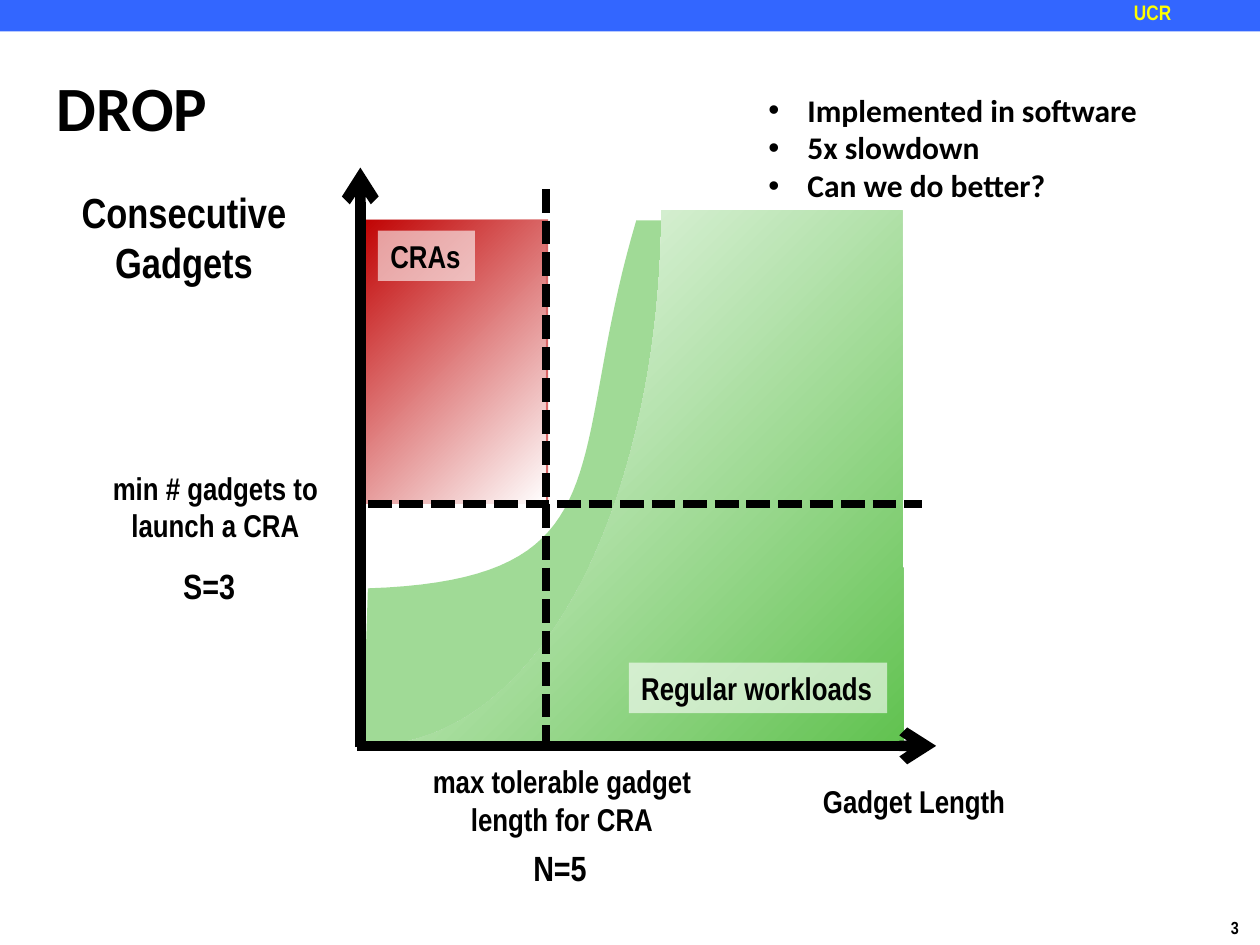
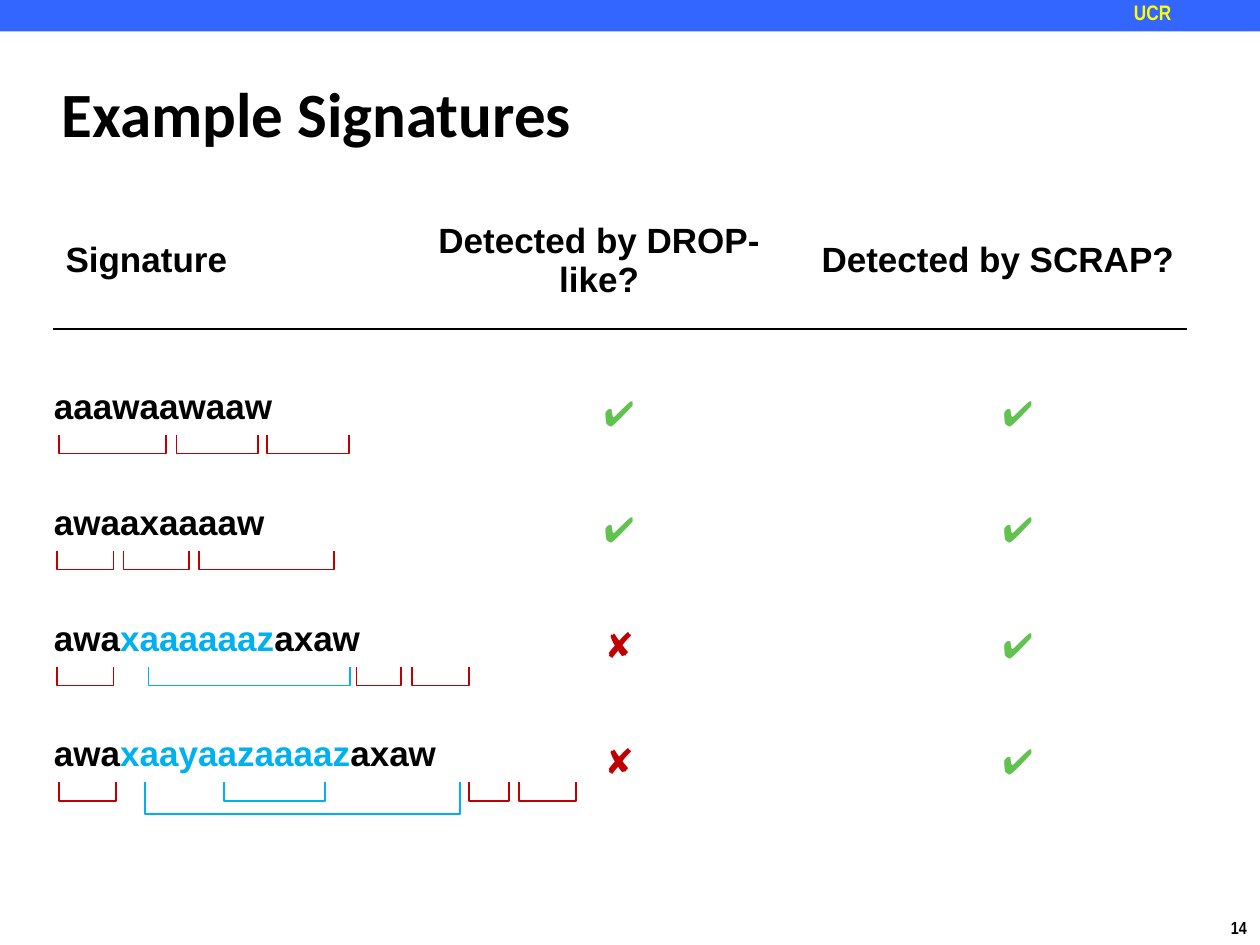
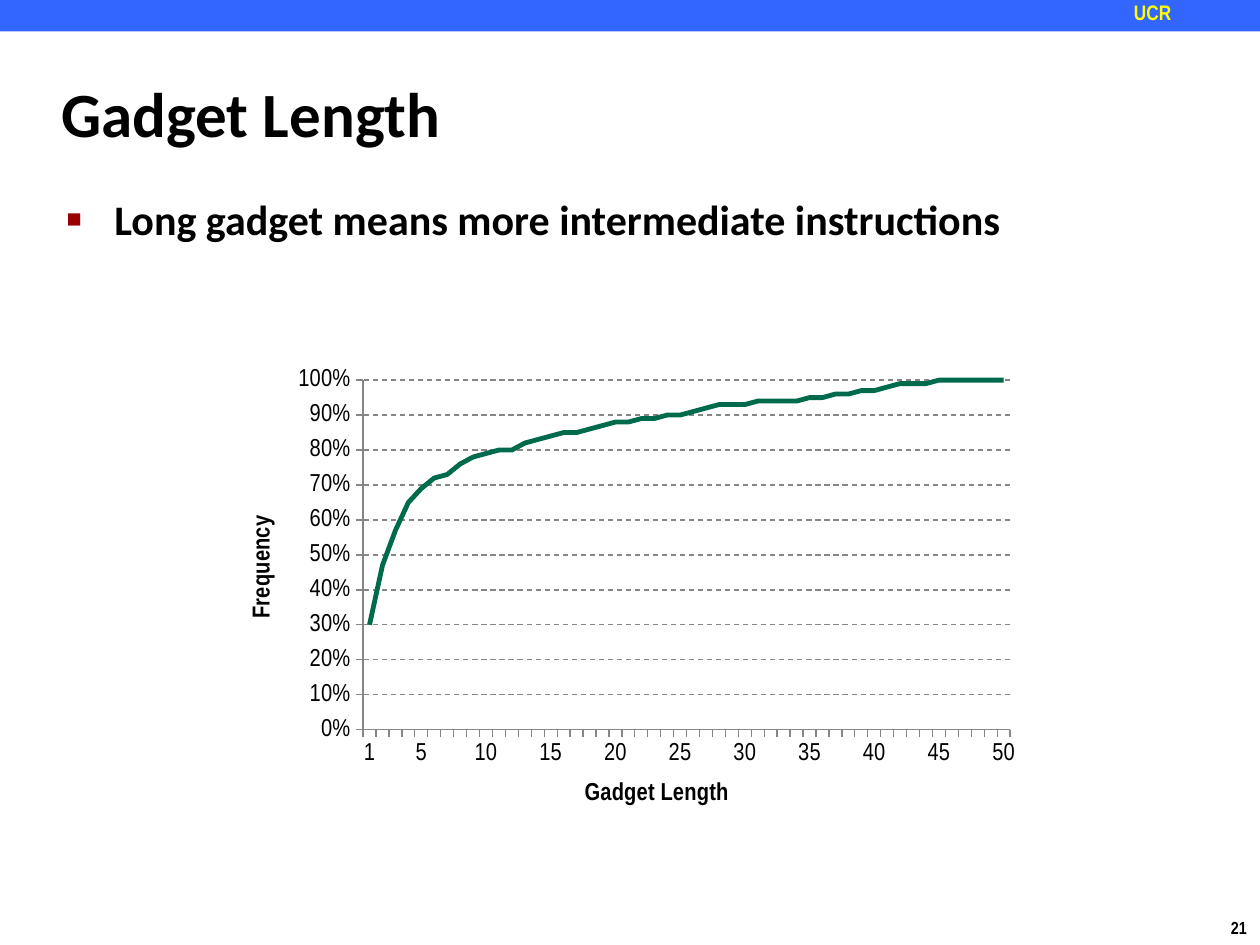
from lxml import etree
from pptx import Presentation
from pptx.chart.data import CategoryChartData
from pptx.dml.color import RGBColor
from pptx.enum.chart import XL_CHART_TYPE, XL_TICK_MARK
from pptx.enum.dml import MSO_LINE
from pptx.enum.shapes import MSO_CONNECTOR, MSO_SHAPE
from pptx.enum.text import MSO_ANCHOR, PP_ALIGN
from pptx.oxml.ns import qn
from pptx.util import Inches, Pt

RECT, BRACKET = MSO_SHAPE.RECTANGLE, MSO_SHAPE.LEFT_BRACKET
STRAIGHT = MSO_CONNECTOR.STRAIGHT
SHORT_DASH, DASH = MSO_LINE.SQUARE_DOT, MSO_LINE.DASH
LEFT, CENTER = PP_ALIGN.LEFT, PP_ALIGN.CENTER
TOP, MIDDLE = MSO_ANCHOR.TOP, MSO_ANCHOR.MIDDLE
LINE_CHART, TICK_OUT = XL_CHART_TYPE.LINE, XL_TICK_MARK.OUTSIDE

BLACK, WHITE, GRAY = "000000", "FFFFFF", "868686"
BAND_BLUE, YELLOW = "3366FF", "FFFF00"
GREEN, RED, SKY = "61C250", "C00000", "00B0F0"
BULLET_RED, CURVE_GREEN = "990000", "006A4D"
NARROW, SANS, HEADING = "Arial Narrow", "Arial", "Calibri"
PLAIN_TABLE = "{2D5ABB26-0587-4C30-8999-92F81FD0307C}"

REGULAR_CURVE = [(0.09, 3.34), (2.16, 3.27), (1.65, 2.33), (2.22, 0.42)]
REGULAR_CORNERS = [(4.3, 0.42), (4.3, 4.57), (0.05, 4.58)]
WORKLOAD_CURVE = [(0.09, 4.59), (1.51, 4.58), (2.41, 2.56), (2.42, 0.34)]
WORKLOAD_CORNERS = [(4.33, 0.34), (4.34, 4.59)]

GRAPH_LABELS = [
    ("Gadget Length", (3.34, 4.83, 2.17, 0.4), 18, True),
    ("max tolerable gadget length for CRA", (0.42, 4.67, 2.42, 0.71), 18, True),
    ("min # gadgets to launch a CRA", (-2.12, 2.34, 2, 0.71), 18, True),
    ("Consecutive Gadgets", (-2.66, 0.1, 2.58, 0.4), 24, True),
    ("N=5", (1.3, 5.34, 0.63, 0.44), 20, False),
    ("S=3", (-1.48, 3.1, 0.62, 0.44), 20, False),
]

SIGNATURES = [
    ([("aaawaawaaw", BLACK)], 1.95, "✔",
     [(0.14, 0.85, RED), (1.07, 0.65, RED), (1.79, 0.65, RED)]),
    ([("awaaxaaaaw", BLACK)], 1.89, "✔",
     [(0.12, 0.45, RED), (0.65, 0.52, RED), (1.25, 1.07, RED)]),
    ([("awa", BLACK), ("xaaaaaaz", SKY), ("axaw", BLACK)], 2.65, "✘",
     [(0.12, 0.45, RED), (0.85, 1.6, SKY), (2.5, 0.35, RED), (2.94, 0.45, RED)]),
    ([("awa", BLACK), ("xaayaazaaaaz", SKY), ("axaw", BLACK)], 3.26, "✘",
     [(0.14, 0.45, RED), (3.39, 0.32, RED), (3.79, 0.45, RED),
      (1.45, 0.8, SKY), (0.82, 2.5, SKY, 0.25)]),
]
MARK_COLORS = {"✔": GREEN, "✘": RED}

FREQUENCIES = [
    0.3, 0.47, 0.57, 0.65, 0.69, 0.72, 0.73, 0.76, 0.78, 0.79,
    0.8, 0.8, 0.82, 0.83, 0.84, 0.85, 0.85, 0.86, 0.87, 0.88,
    0.88, 0.89, 0.89, 0.9, 0.9, 0.91, 0.92, 0.93, 0.93, 0.93,
    0.94, 0.94, 0.94, 0.94, 0.95, 0.95, 0.96, 0.96, 0.97, 0.97,
    0.98, 0.99, 0.99, 0.99, 1, 1, 1, 1, 1, 1]


def rgb(value):
    """Turn a hex string into a colour."""
    return RGBColor.from_string(value)


def inches(values):
    """Turn numbers into a list of lengths."""
    return [Inches(value) for value in values]


def within(box, dx, dy, *size):
    """Offset a point or box by the corner of the given box."""
    return (box[0] + dx, box[1] + dy, *size)


def add_xml(parent, tag, **attributes):
    """Append an XML element with attributes."""
    child = etree.SubElement(parent, qn(tag))
    for key, value in attributes.items():
        child.set(key, str(value))
    return child


def style_font(font, size, color=BLACK, name=NARROW, bold=True):
    """Set the look of a font."""
    font.size, font.name, font.bold = Pt(size), name, bold
    font.color.rgb = rgb(color)


def write(frame, paragraphs, size=18, color=BLACK, font=NARROW, align=LEFT,
          hang=0, bullet=None, bullet_color=BLACK, bullet_size=100, before=0):
    """Fill a text frame with paragraphs of plain text or coloured runs."""
    for index, content in enumerate(paragraphs):
        paragraph = frame.add_paragraph() if index else frame.paragraphs[0]
        paragraph.alignment = align
        paragraph.space_before = Pt(before)
        runs = [(content, color)] if isinstance(content, str) else content
        for words, run_color in runs:
            run = paragraph.add_run()
            run.text = words
            style_font(run.font, size, run_color, font)
        if hang:
            properties = paragraph._p.get_or_add_pPr()
            properties.set("marL", str(Inches(hang)))
            properties.set("indent", str(-Inches(hang)))
        if bullet:
            add_xml(add_xml(properties, "a:buClr"), "a:srgbClr", val=bullet_color)
            add_xml(properties, "a:buSzPct", val=bullet_size * 1000)
            add_xml(properties, "a:buFont", typeface=SANS)
            add_xml(properties, "a:buChar", char=bullet)


def add_text(slide, box, paragraphs, wrap=True, inset=True, anchor=TOP, **fmt):
    """Add a text box."""
    frame = slide.shapes.add_textbox(*inches(box)).text_frame
    frame.word_wrap, frame.vertical_anchor = wrap, anchor
    if not inset:
        frame.margin_left = frame.margin_right = 0
        frame.margin_top = frame.margin_bottom = 0
    write(frame, paragraphs, **fmt)


def paint(shape, fill, opacity=100):
    """Give a shape a flat or diagonal two-colour fill and no outline."""
    shape.shadow.inherit = False
    shape.line.fill.background()
    if isinstance(fill, tuple):
        shape.fill.gradient()
        shape.fill.gradient_angle = 315
        for stop, color in zip(shape.fill.gradient_stops, fill):
            stop.color.rgb = rgb(color)
        return
    shape.fill.solid()
    shape.fill.fore_color.rgb = rgb(fill)
    if opacity < 100:
        color = shape._element.spPr.find(".//" + qn("a:srgbClr"))
        add_xml(color, "a:alpha", val=opacity * 1000)


def add_rect(slide, box, fill, opacity=100):
    """Add a filled rectangle."""
    rect = slide.shapes.add_shape(RECT, *inches(box))
    paint(rect, fill, opacity)
    return rect


def add_line(slide, start, end, width, dash=None, arrow=False):
    """Add a straight black line, dashed or with an arrowhead."""
    line = slide.shapes.add_connector(STRAIGHT, *inches(start + end))
    line.line.width = Pt(width)
    line.line.color.rgb = rgb(BLACK)
    if dash:
        line.line.dash_style = dash
    if arrow:
        add_xml(line.line._get_or_add_ln(), "a:tailEnd", type="arrow")
    add_xml(line._element.spPr, "a:effectLst")


def bezier(controls, steps=40):
    """Sample a cubic curve from its four control points."""
    points = []
    for step in range(steps + 1):
        t = step / steps
        weights = ((1 - t) ** 3, 3 * t * (1 - t) ** 2, 3 * t * t * (1 - t), t ** 3)
        points.append(tuple(sum(w * point[axis] for w, point in zip(weights, controls))
                            for axis in (0, 1)))
    return points


def add_region(slide, box, curve, corners, fill, opacity=100):
    """Add the area bounded by a curve and straight corners."""
    points = [inches(within(box, *point)) for point in bezier(curve) + corners]
    outline = slide.shapes.build_freeform(*points[0])
    outline.add_line_segments(points[1:], close=True)
    paint(outline.convert_to_shape(), fill, opacity)


def add_table(slide, box, widths, cells, align=CENTER, underline=False):
    """Add a one-row table from pairs of text and colour."""
    table = slide.shapes.add_table(1, len(cells), *inches(box)).table
    table.first_row = table.horz_banding = False
    table._tbl.tblPr.find(qn("a:tableStyleId")).text = PLAIN_TABLE
    for index, (words, color) in enumerate(cells):
        table.columns[index].width = Inches(widths[index])
        cell = table.cell(0, index)
        cell.vertical_anchor = MIDDLE
        if underline:
            border = add_xml(cell._tc.get_or_add_tcPr(), "a:lnB", w=Pt(1))
            add_xml(add_xml(border, "a:solidFill"), "a:srgbClr", val=BLACK)
        cell.fill.background()
        write(cell.text_frame, [words], size=20, color=color, font=SANS,
              align=align if index == 0 else CENTER)


def add_bracket(slide, left, top, span, color, depth=0.15):
    """Add an upward-opening bracket below a stretch of text."""
    x, y = left + (span - depth) / 2, top + (depth - span) / 2
    bracket = slide.shapes.add_shape(BRACKET, *inches((x, y, depth, span)))
    bracket.rotation = 270
    bracket.adjustments[0] = 0
    bracket.shadow.inherit = False
    bracket.fill.background()
    bracket.line.color.rgb = rgb(color)
    bracket.line.width = Pt(1)


def start_slide(deck, title, number, corner=(0.39, 0.48)):
    """Add a slide with its band, page number and title."""
    slide = deck.slides.add_slide(deck.slide_layouts[6])
    add_text(slide, (9.77, 7.28, 0.23, 0.17), [str(number)], inset=False, size=10)
    add_rect(slide, (0, 0, 10, 0.25), BAND_BLUE)
    add_text(slide, (9, 0, 1, 0.22), ["UCR"], inset=False, size=12, color=YELLOW)
    add_text(slide, (*corner, 8.3, 0.83), [title], anchor=MIDDLE,
             size=36, font=HEADING, hang=0.13)
    return slide


def add_gadget_graph(slide, box):
    """Draw the attack and workload regions with axes and thresholds."""
    width, height = box[2:]
    add_region(slide, box, REGULAR_CURVE, REGULAR_CORNERS, GREEN, 60)
    add_rect(slide, within(box, 0.02, 0.41, 1.5, 2.25), RED, 60)
    add_region(slide, box, WORKLOAD_CURVE, WORKLOAD_CORNERS, (WHITE, GREEN))
    add_rect(slide, within(box, 0, 0.42, 1.5, 2.25), (RED, WHITE))
    for words, place, size, wrap in GRAPH_LABELS:
        add_text(slide, within(box, *place), [words], wrap=wrap, size=size, align=CENTER)
    for words, place in (("Regular workloads", (2.16, 3.93, 2.05, 0.4)),
                         ("CRAs", (0.17, 0.5, 0.77, 0.4))):
        tag = add_rect(slide, within(box, *place), WHITE, 60)
        tag.text_frame.word_wrap = False
        write(tag.text_frame, [words])
    add_line(slide, within(box, 0.03, height), within(box, 0.03, 0), 6, arrow=True)
    add_line(slide, within(box, 0, 4.59), within(box, width, 4.59), 6, arrow=True)
    add_line(slide, within(box, 1.5, 0.17), within(box, 1.5, 4.57), 4.5, SHORT_DASH)
    add_line(slide, within(box, 0.09, 2.67), within(box, 4.49, 2.67), 4.5, SHORT_DASH)


def add_signature_row(slide, box, runs, text_width, drop_mark, brackets):
    """Place one signature with its brackets and detection marks."""
    add_text(slide, within(box, 0, 0.25, text_width, 0.44), [runs],
             wrap=False, size=20, font=SANS)
    marks = [(mark, MARK_COLORS[mark]) for mark in (drop_mark, "✔")]
    add_table(slide, within(box, 2.92, 0, 6.33, box[3]), (3.33, 3), marks)
    for offset, span, color, *depth in brackets:
        left, top = within(box, offset, 0.7)
        add_bracket(slide, left, top, span, color, *depth)


def add_frequency_chart(slide, box):
    """Plot cumulative frequency by gadget length."""
    data = CategoryChartData(number_format="0%")
    data.categories = [str(n) if n == 1 or n % 5 == 0 else "" for n in range(1, 51)]
    data.add_series("Series 1", FREQUENCIES)
    chart = slide.shapes.add_chart(LINE_CHART, *inches(box), data).chart
    chart.has_legend = chart.has_title = False
    style_font(chart.font, 14, bold=False)
    curve = chart.plots[0].series[0]
    curve.smooth = False
    curve.format.line.color.rgb = rgb(CURVE_GREEN)
    curve.format.line.width = Pt(2.75)
    chart.plots[0].vary_by_categories = False
    lengths, shares = chart.category_axis, chart.value_axis
    for axis, title in ((lengths, "Gadget Length"), (shares, "Frequency")):
        axis.major_tick_mark = TICK_OUT
        axis.format.line.color.rgb = rgb(GRAY)
        write(axis.axis_title.text_frame, [title], size=14, align=CENTER)
    shares.minimum_scale, shares.maximum_scale, shares.major_unit = 0, 1, 0.1
    shares.tick_labels.number_format = "0%"
    shares.tick_labels.number_format_is_linked = False
    grid = shares.major_gridlines.format.line
    grid.color.rgb, grid.dash_style = rgb(GRAY), DASH
    skip = add_xml(lengths._element, "c:tickLblSkip", val=1)
    lengths._element.find(qn("c:noMultiLvlLbl")).addprevious(skip)
    plot_area = chart._chartSpace.chart.plotArea
    for unset in plot_area.findall(qn("c:layout")):
        plot_area.remove(unset)
    layout = add_xml(plot_area, "c:layout")
    plot_area.insert(0, layout)
    manual = add_xml(layout, "c:manualLayout")
    for tag, value in (("layoutTarget", "inner"), ("xMode", "edge"), ("yMode", "edge"),
                       ("x", 0.17), ("y", 0.05), ("w", 0.8), ("h", 0.74)):
        add_xml(manual, "c:" + tag, val=value)


def build_drop(deck):
    """Build the slide on the DROP thresholds."""
    slide = start_slide(deck, "DROP", 3, (0.35, 0.43))
    add_gadget_graph(slide, (2.83, 1.33, 4.6, 4.6))
    add_text(slide, (6, 0.67, 3.18, 1.01),
             ["Implemented in software", "5x slowdown", "Can we do better?"],
             font=HEADING, hang=0.31, bullet="•")


def build_signatures(deck):
    """Build the slide comparing detection of signatures."""
    slide = start_slide(deck, "Example Signatures", 14)
    headings = ("Signature", "Detected by DROP-like?", "Detected by SCRAP?")
    add_table(slide, (0.42, 1.53, 9, 1.08), (2.67, 3.33, 3),
              [(heading, BLACK) for heading in headings], align=LEFT, underline=True)
    for index, signature in enumerate(SIGNATURES):
        add_signature_row(slide, (0.33, 2.75 + 0.92 * index, 9.25, 1.08), *signature)


def build_lengths(deck):
    """Build the slide on gadget length frequencies."""
    slide = start_slide(deck, "Gadget Length", 21)
    add_text(slide, (0.43, 1.49, 8.64, 5.44),
             ["Long gadget means more intermediate instructions"], size=24, font=HEADING,
             hang=0.38, bullet="■", bullet_color=BULLET_RED, bullet_size=60, before=5)
    add_frequency_chart(slide, (1.79, 2.83, 6.42, 3.75))


def main():
    """Build and save the deck."""
    deck = Presentation()
    deck.slide_width, deck.slide_height = Inches(10), Inches(7.5)
    build_drop(deck)
    build_signatures(deck)
    build_lengths(deck)
    deck.save("out.pptx")


if __name__ == "__main__":
    main()
